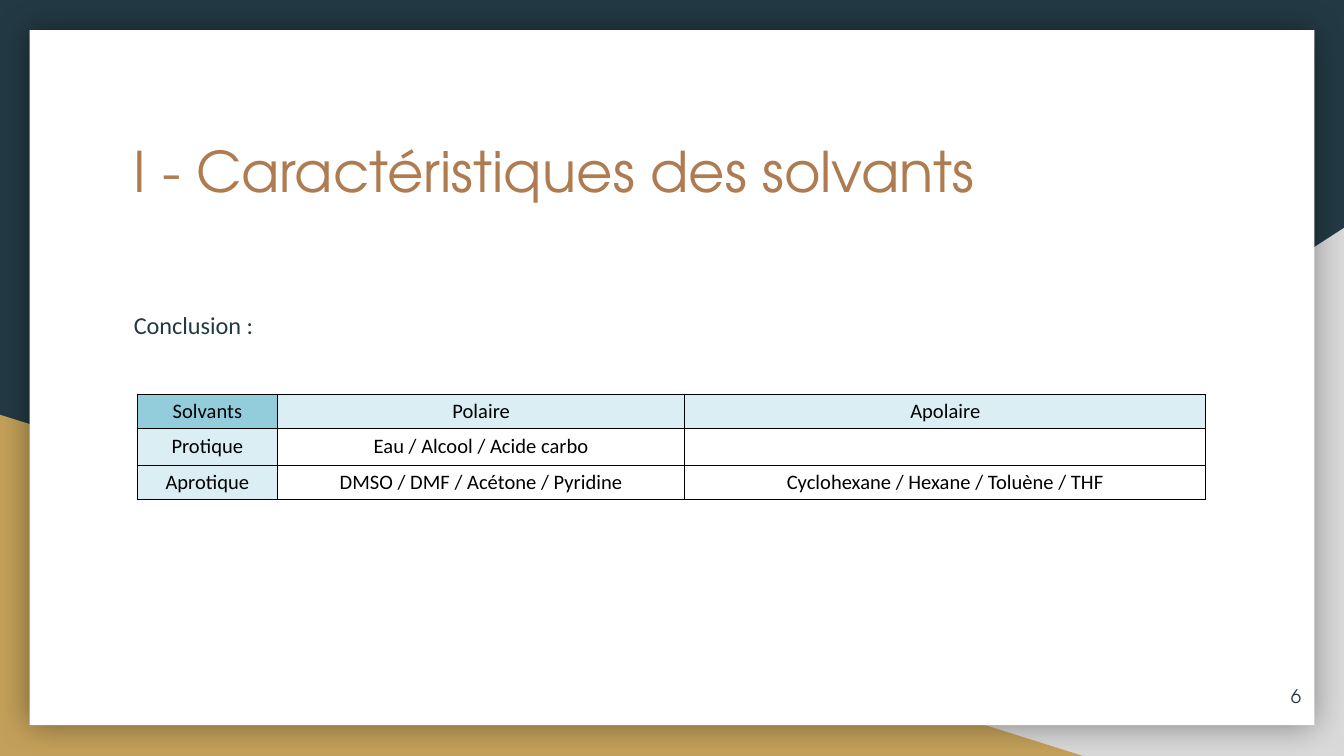
from lxml import etree
from pptx import Presentation
from pptx.dml.color import RGBColor
from pptx.enum.shapes import MSO_SHAPE
from pptx.enum.text import MSO_ANCHOR, MSO_AUTO_SIZE, PP_ALIGN
from pptx.oxml import parse_xml
from pptx.oxml.ns import nsdecls, qn
from pptx.util import Cm, Pt

RECTANGLE, TRIANGLE = MSO_SHAPE.RECTANGLE, MSO_SHAPE.RIGHT_TRIANGLE
TOP, MIDDLE = MSO_ANCHOR.TOP, MSO_ANCHOR.MIDDLE
LEFT, CENTER, RIGHT = PP_ALIGN.LEFT, PP_ALIGN.CENTER, PP_ALIGN.RIGHT
NO_AUTOFIT = MSO_AUTO_SIZE.NONE

NAVY = RGBColor(0x23, 0x3A, 0x44)
GOLD = RGBColor(0xC4, 0xA1, 0x5A)
GREY = RGBColor(0xD9, 0xD9, 0xD9)
WHITE = RGBColor(0xFF, 0xFF, 0xFF)
BLACK = RGBColor(0, 0, 0)
COPPER = RGBColor(0xAF, 0x7B, 0x51)
CORNER_BLUE = RGBColor(0x93, 0xCD, 0xDC)
HEADER_BLUE = RGBColor(0xDB, 0xEE, 0xF3)

HEADING_FONT, BODY_FONT = "TeX Gyre Adventor", "Calibri"

SOLVENTS = [
    ["Solvants", "Polaire", "Apolaire"],
    ["Protique", "Eau / Alcool / Acide carbo", ""],
    ["Aprotique", "DMSO / DMF / Acétone / Pyridine", "Cyclohexane / Hexane / Toluène / THF"],
]
COLUMN_WIDTHS = [2.66, 7.69, 9.85]
ROW_HEIGHTS = [0.65, 0.69, 0.65]


def apply(target, values):
    for name, value in values.items():
        setattr(target, name, value)


class SlideBuilder:
    inset = 0.25
    cell_inset = 0.18
    border_width = Pt(0.5)

    def __init__(self, slide):
        self.slide = slide

    def background(self, color):
        fill = self.slide.background.fill
        fill.solid()
        fill.fore_color.rgb = color

    def panel(self, kind, box, color, flip=False):
        panel = self.slide.shapes.add_shape(kind, *map(Cm, box))
        panel.shadow.inherit = False
        panel.fill.solid()
        panel.fill.fore_color.rgb = color
        panel.line.fill.background()
        if flip:
            panel._element.spPr.xfrm.set("flipH", "1")
        return panel

    def glow_shadow(self, panel):
        """Give the panel a soft dark shadow on all sides."""
        effects = panel._element.spPr.find(qn("a:effectLst"))
        effects.append(parse_xml(
            f'<a:outerShdw {nsdecls("a")} blurRad="{Pt(18)}" dist="0" dir="0" algn="ctr" '
            'rotWithShape="0"><a:srgbClr val="000000"><a:alpha val="40000"/></a:srgbClr>'
            '</a:outerShdw>'))

    def paragraph(self, frame, text, font, size, color, align=LEFT, **spacing):
        paragraph = frame.paragraphs[0]
        paragraph.text = text
        apply(paragraph, {"alignment": align, **spacing})
        for holder in (paragraph, *paragraph.runs):
            apply(holder.font, {"name": font, "size": Pt(size)})
            holder.font.color.rgb = color

    def frame(self, holder, anchor):
        margins = dict.fromkeys(
            ("margin_left", "margin_top", "margin_right", "margin_bottom"), Cm(self.inset))
        apply(holder.text_frame, {"word_wrap": True, "auto_size": NO_AUTOFIT,
                                  "vertical_anchor": anchor, **margins})
        return holder.text_frame

    def title(self, box, text, size, color):
        title = self.slide.shapes.title
        apply(title, dict(zip(("left", "top", "width", "height"), map(Cm, box))))
        self.slide.shapes._spTree.append(title._element)  # in front of the panels
        self.paragraph(self.frame(title, TOP), text, HEADING_FONT, size, color)

    def text(self, box, text, font, size, color, anchor=TOP, align=LEFT, **spacing):
        textbox = self.slide.shapes.add_textbox(*map(Cm, box))
        self.paragraph(self.frame(textbox, anchor), text, font, size, color, align, **spacing)

    def cell_borders(self, cell):
        properties = cell._tc.get_or_add_tcPr()
        for side in ("lnL", "lnR", "lnT", "lnB"):
            line = etree.SubElement(properties, qn(f"a:{side}"), w=str(self.border_width))
            fill = etree.SubElement(line, qn("a:solidFill"))
            etree.SubElement(fill, qn("a:srgbClr"), val=str(BLACK))

    def table(self, left, top, rows, widths, heights, size):
        table = self.slide.shapes.add_table(
            len(rows), len(widths), Cm(left), Cm(top), Cm(sum(widths)), Cm(sum(heights))).table
        apply(table, {"first_row": False, "horz_banding": False})
        for column, width in zip(table.columns, widths):
            column.width = Cm(width)
        for row, height in zip(table.rows, heights):
            row.height = Cm(height)
        for r, row in enumerate(rows):
            for c, text in enumerate(row):
                cell = table.cell(r, c)
                apply(cell, {"vertical_anchor": MIDDLE, "margin_top": 0, "margin_bottom": 0,
                             "margin_left": Cm(self.cell_inset),
                             "margin_right": Cm(self.cell_inset)})
                self.cell_borders(cell)
                if r and c:
                    cell.fill.background()
                else:
                    cell.fill.solid()
                    cell.fill.fore_color.rgb = HEADER_BLUE if r or c else CORNER_BLUE
                self.paragraph(cell.text_frame, text, BODY_FONT, size, BLACK, CENTER)


def main():
    deck = Presentation()
    apply(deck, {"slide_width": Cm(25.4), "slide_height": Cm(14.29)})
    title_only = deck.slide_layouts[5]
    builder = SlideBuilder(deck.slides.add_slide(title_only))

    builder.background(NAVY)
    builder.panel(TRIANGLE, (9.96, 4.31, 15.44, 9.98), GREY, flip=True)
    builder.panel(TRIANGLE, (0, 7.84, 20.47, 6.45), GOLD)
    page = builder.panel(RECTANGLE, (0.56, 0.57, 24.28, 13.14), WHITE)
    builder.glow_shadow(page)

    builder.title((2.28, 2.34, 20.85, 2.64), "I - Caractéristiques des solvants", 30, COPPER)
    builder.text((2.28, 5.54, 6.12, 1.4), "Conclusion :", BODY_FONT, 13, NAVY,
                 line_spacing=1.15, space_after=Pt(16))
    builder.table(2.59, 7.45, SOLVENTS, COLUMN_WIDTHS, ROW_HEIGHTS, 11)
    builder.text((23.32, 12.62, 1.52, 1.09), "6", HEADING_FONT, 10, NAVY, MIDDLE, RIGHT)

    deck.save("out.pptx")


if __name__ == "__main__":
    main()
